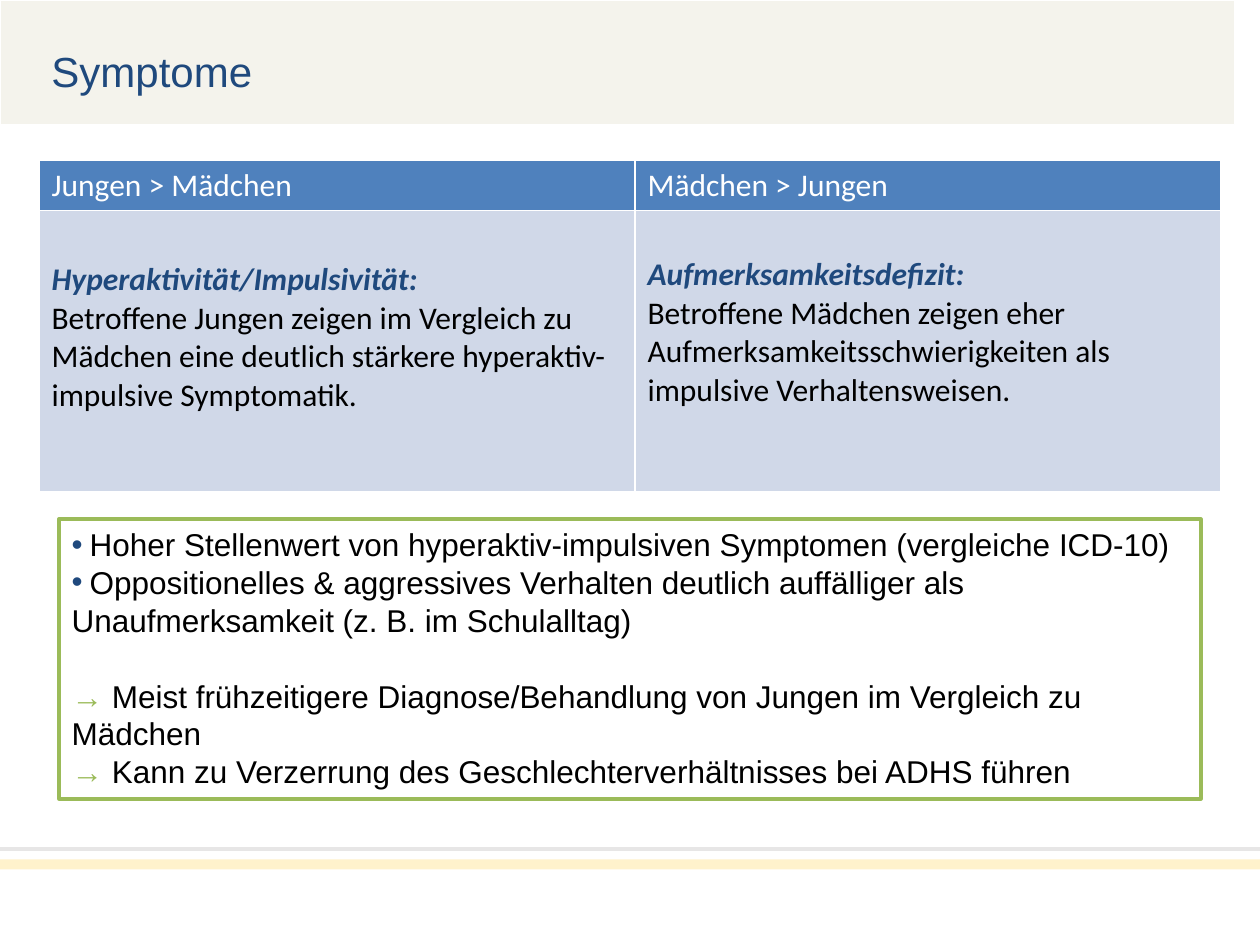
from lxml import etree
from pptx import Presentation
from pptx.dml.color import RGBColor
from pptx.enum.shapes import MSO_CONNECTOR, MSO_SHAPE
from pptx.enum.text import MSO_ANCHOR, PP_ALIGN
from pptx.oxml.ns import qn
from pptx.util import Inches, Pt

RECTANGLE = MSO_SHAPE.RECTANGLE
STRAIGHT = MSO_CONNECTOR.STRAIGHT
TOP = MSO_ANCHOR.TOP
LEFT = PP_ALIGN.LEFT

NAVY, GREEN, BLACK, WHITE = "1F497D", "9BBB59", "000000", "FFFFFF"
HEADER_BLUE, CELL_BLUE = "4F81BD", "D0D8E8"

HEADING = {"name": "Calibri", "size": Pt(18), "bold": True, "italic": True}
CELL_TEXT = {"name": "Calibri", "size": Pt(18)}
BOX_TEXT = {"name": "Arial", "size": Pt(18)}

COMPARISON = [
    ("Jungen > Mädchen", "Hyperaktivität/Impulsivität:",
     "Betroffene Jungen zeigen im Vergleich zu Mädchen eine deutlich stärkere "
     "hyperaktiv-impulsive Symptomatik.", 4.73, 0.4),
    ("Mädchen > Jungen", "Aufmerksamkeitsdefizit:",
     "Betroffene Mädchen zeigen eher Aufmerksamkeitsschwierigkeiten als "
     "impulsive Verhaltensweisen.", 4.65, 0.36),
]
OBSERVATIONS = [
    "Hoher Stellenwert von hyperaktiv-impulsiven Symptomen (vergleiche ICD-10)",
    "Oppositionelles & aggressives Verhalten deutlich auffälliger als "
    "Unaufmerksamkeit (z. B. im Schulalltag)",
]
CONSEQUENCES = [
    " Meist frühzeitigere Diagnose/Behandlung von Jungen im Vergleich zu Mädchen",
    " Kann zu Verzerrung des Geschlechterverhältnisses bei ADHS führen",
]


def rgb(color):
    return RGBColor.from_string(color)


def add_run(paragraph, text, color, font_format):
    run = paragraph.add_run()
    run.text = text
    run.font.color.rgb = rgb(color)
    for name, value in font_format.items():
        setattr(run.font, name, value)


def add_rectangle(slide, bounds, fill=None, line=None, width=0.75):
    shape = slide.shapes.add_shape(RECTANGLE, *map(Inches, bounds))
    shape.shadow.inherit = False
    if fill:
        shape.fill.solid()
        shape.fill.fore_color.rgb = rgb(fill)
    else:
        shape.fill.background()
    if line:
        shape.line.color.rgb = rgb(line)
        shape.line.width = Pt(width)
    else:
        shape.line.fill.background()
    return shape


def add_title(slide, text):
    frame = slide.shapes.add_textbox(
        Inches(0.31), Inches(0.31), Inches(6.48), Inches(0.5)).text_frame
    frame.word_wrap = True
    add_run(frame.paragraphs[0], text, NAVY, {"name": "Arial", "size": Pt(24)})


def style_cell(cell, fill):
    """Give the cell thin white borders and a plain fill."""
    properties = cell._tc.get_or_add_tcPr()
    for side in ("lnL", "lnR", "lnT", "lnB"):
        border = etree.SubElement(properties, qn(f"a:{side}"), w=str(Pt(1)))
        solid = etree.SubElement(border, qn("a:solidFill"))
        etree.SubElement(solid, qn("a:srgbClr"), val=WHITE)
    cell.fill.solid()
    cell.fill.fore_color.rgb = rgb(fill)


def add_comparison(slide):
    table = slide.shapes.add_table(
        2, len(COMPARISON), Inches(0.31), Inches(1.27), Inches(9.38), Inches(2.63)).table
    for row, height in zip(table.rows, (0.4, 2.23)):
        row.height = Inches(height)
    for index, (group, heading, finding, width, top) in enumerate(COMPARISON):
        table.columns[index].width = Inches(width)
        header, body = table.cell(0, index), table.cell(1, index)
        style_cell(header, HEADER_BLUE)
        style_cell(body, CELL_BLUE)
        add_run(header.text_frame.paragraphs[0], group, WHITE,
                {**CELL_TEXT, "bold": False})
        body.margin_top = Inches(top)
        add_run(body.text_frame.paragraphs[0], heading, NAVY, HEADING)
        add_run(body.text_frame.add_paragraph(), finding, BLACK, CELL_TEXT)


def add_bullet(paragraph):
    properties = paragraph._p.get_or_add_pPr()
    properties.set("marL", "0")
    properties.set("indent", "0")
    etree.SubElement(properties, qn("a:buFont"), typeface="Arial")
    etree.SubElement(properties, qn("a:buChar"), char="•")


def add_conclusions(slide):
    box = add_rectangle(slide, (0.47, 4.12, 9.06, 2.22), line=GREEN, width=2.25)
    frame = box.text_frame
    frame.word_wrap = True
    frame.vertical_anchor = TOP
    for index, text in enumerate(OBSERVATIONS + CONSEQUENCES):
        paragraph = frame.add_paragraph() if index else frame.paragraphs[0]
        paragraph.alignment = LEFT
        if index < len(OBSERVATIONS):
            add_bullet(paragraph)
            add_run(paragraph, " ", NAVY, CELL_TEXT)
        else:
            if index == len(OBSERVATIONS):
                paragraph.space_before = Pt(21.6)
            add_run(paragraph, "→", GREEN, BOX_TEXT)
        add_run(paragraph, text, BLACK, BOX_TEXT)


def add_footer(slide):
    rule = slide.shapes.add_connector(
        STRAIGHT, Inches(0), Inches(6.74), Inches(10), Inches(6.74))
    rule.line.color.rgb = rgb("E7E6E6")
    rule.line.width = Pt(2)
    etree.SubElement(rule._element.spPr, qn("a:effectLst"))
    add_rectangle(slide, (0, 6.82, 10, 0.08), fill="FFF2CC")


def main():
    presentation = Presentation()
    presentation.slide_width = Inches(10)
    presentation.slide_height = Inches(7.5)
    slide = presentation.slides.add_slide(presentation.slide_layouts[6])
    add_rectangle(slide, (0, 0, 9.8, 0.99), fill="F4F3EC", line=WHITE)
    add_title(slide, "Symptome")
    add_comparison(slide)
    add_conclusions(slide)
    add_footer(slide)
    presentation.save("out.pptx")


if __name__ == "__main__":
    main()
